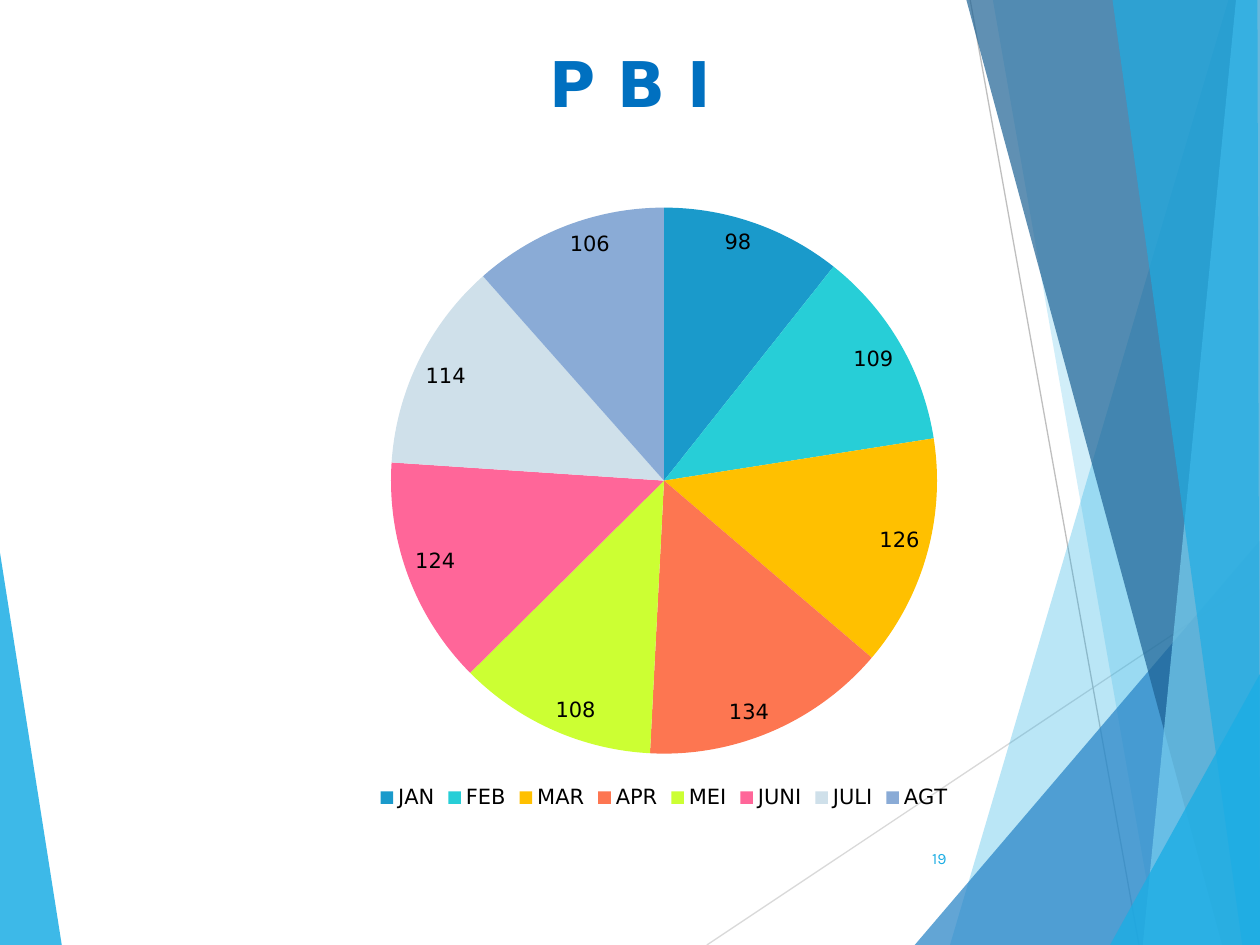
import pptx
import pptx.chart.data
import pptx.dml.color
import pptx.enum.chart
import pptx.enum.shapes
import pptx.enum.text
import pptx.oxml
import pptx.oxml.ns
import pptx.util
from dataclasses import dataclass


# Content
HEAD = "P B I"
PAGE = "19"
SALES = [  # month, value, slice colour
    ("JAN", 98, "1A9ACB"),
    ("FEB", 109, "27CED7"),
    ("MAR", 126, "FFC000"),
    ("APR", 134, "FD7651"),
    ("MEI", 108, "CCFF33"),
    ("JUNI", 124, "FF6699"),
    ("JULI", 114, "CFE0EA"),
    ("AGT", 106, "8AABD6"),
]


@dataclass
class Theme:
    sans: str = "DejaVu Sans"
    body: str = "Karla"
    head: str = "0070C0"
    sky: str = "1CADE4"
    blue: str = "2683C6"
    navy: str = "1D6294"
    pale: str = "77CEEF"
    ink: str = "000000"
    big: int = 36
    mid: int = 12
    small: int = 9


THEME = Theme()

# Backdrop, in percent of slide width and height
WEDGE = ([(0, 58.5), (4.9, 100), (0, 100)], THEME.sky, 85)
RAYS = [  # start, end, colour
    ((56.1, 100), (100, 61), "D9D9D9"),
    ((77, 0), (90.4, 100), "BFBFBF"),
]
SHARDS = [  # corners, colour, opacity
    ([(97.5, 0), (75.4, 100), (100, 100), (100, 0)], THEME.sky, 30),
    ([(78.8, 0), (91.9, 100), (100, 100), (100, 0)], THEME.sky, 20),
    ([(72.6, 100), (100, 57.2), (100, 100)], THEME.blue, 72),
    ([(76.7, 0), (97, 100), (100, 100), (100, 0)], THEME.navy, 70),
    ([(98.1, 0), (90.7, 100), (100, 100), (100, 0)], THEME.pale, 70),
    ([(88.3, 0), (98.6, 100), (100, 100), (99.8, 0)], THEME.sky, 65),
    ([(88.1, 100), (100, 71.3), (100, 100)], THEME.sky, 80),
]

# Boxes: left, top, width, height in percent
SPOTS = {
    "head": (5, 4, 90, 16.67),
    "pie": (7.7, 20.13, 90, 66.13),
    "page": (70.5, 88.13, 5.6, 5.33),
}

deck = pptx.Presentation()
deck.slide_width = pptx.util.Inches(10)
deck.slide_height = pptx.util.Inches(7.5)
slide = deck.slides.add_slide(deck.slide_layouts[5])
shapes = slide.shapes


def spot(x, y):
    return int(deck.slide_width * x / 100), int(deck.slide_height * y / 100)


def box(name):
    x, y, w, h = SPOTS[name]
    return (*spot(x, y), *spot(w, h))


def tint(code):
    return pptx.dml.color.RGBColor.from_string(code)


def style(font, size, code, face=THEME.sans, bold=False):
    font.name, font.bold = face, bold
    font.size = pptx.util.Pt(size)
    font.color.rgb = tint(code)


def shard(points, code, alpha):
    first, *rest = [spot(*p) for p in points]
    pen = shapes.build_freeform(*first)
    pen.add_line_segments(rest, close=True)
    form = pen.convert_to_shape()
    form.shadow.inherit = False
    form.line.fill.background()
    form.fill.solid()
    form.fill.fore_color.rgb = tint(code)
    color = form.element.spPr.find(".//" + pptx.oxml.ns.qn("a:srgbClr"))
    node = pptx.oxml.parse_xml(f'<a:alpha {pptx.oxml.ns.nsdecls("a")} val="{alpha * 1000}"/>')
    color.append(node)


def ray(start, end, code):
    kind = pptx.enum.shapes.MSO_CONNECTOR.STRAIGHT
    line = shapes.add_connector(kind, *spot(*start), *spot(*end))
    line.line.color.rgb = tint(code)
    line.line.width = pptx.util.Pt(0.75)
    bare = pptx.oxml.parse_xml(f'<a:effectLst {pptx.oxml.ns.nsdecls("a")}/>')
    line.element.spPr.append(bare)


# Backdrop
shard(*WEDGE)
for item in RAYS:
    ray(*item)
for item in SHARDS:
    shard(*item)

# Title, brought in front of the backdrop
title = shapes.title
title.element.getparent().append(title.element)
title.left, title.top, title.width, title.height = box("head")
title.text_frame.text = HEAD
title.text_frame.vertical_anchor = pptx.enum.text.MSO_ANCHOR.TOP
para = title.text_frame.paragraphs[0]
para.alignment = pptx.enum.text.PP_ALIGN.CENTER
style(para.runs[0].font, THEME.big, THEME.head, bold=True)

# Pie chart
data = pptx.chart.data.CategoryChartData()
data.categories = [month for month, _, _ in SALES]
data.add_series("Series 1", [value for _, value, _ in SALES])
kind = pptx.enum.chart.XL_CHART_TYPE.PIE
chart = shapes.add_chart(kind, *box("pie"), data).chart
chart.has_title = False
style(chart.font, 18, THEME.ink, THEME.body)
chart.has_legend = True
chart.legend.position = pptx.enum.chart.XL_LEGEND_POSITION.BOTTOM
chart.legend.include_in_layout = False
style(chart.legend.font, THEME.mid, THEME.ink)

plot = chart.plots[0]
plot.vary_by_categories = True
plot.has_data_labels = True
labels = plot.data_labels
labels.show_value = True
labels.show_percentage = False
labels.position = pptx.enum.chart.XL_LABEL_POSITION.INSIDE_END
style(labels.font, THEME.mid, THEME.ink)
for i, (_, _, code) in enumerate(SALES):
    part = plot.series[0].points[i].format
    part.fill.solid()
    part.fill.fore_color.rgb = tint(code)
    part.line.fill.background()

# Page number
page = shapes.add_textbox(*box("page")).text_frame
page.word_wrap = True
page.vertical_anchor = pptx.enum.text.MSO_ANCHOR.MIDDLE
page.text = PAGE
page.paragraphs[0].alignment = pptx.enum.text.PP_ALIGN.RIGHT
style(page.paragraphs[0].runs[0].font, THEME.small, THEME.sky, THEME.body)

deck.save("out.pptx")
